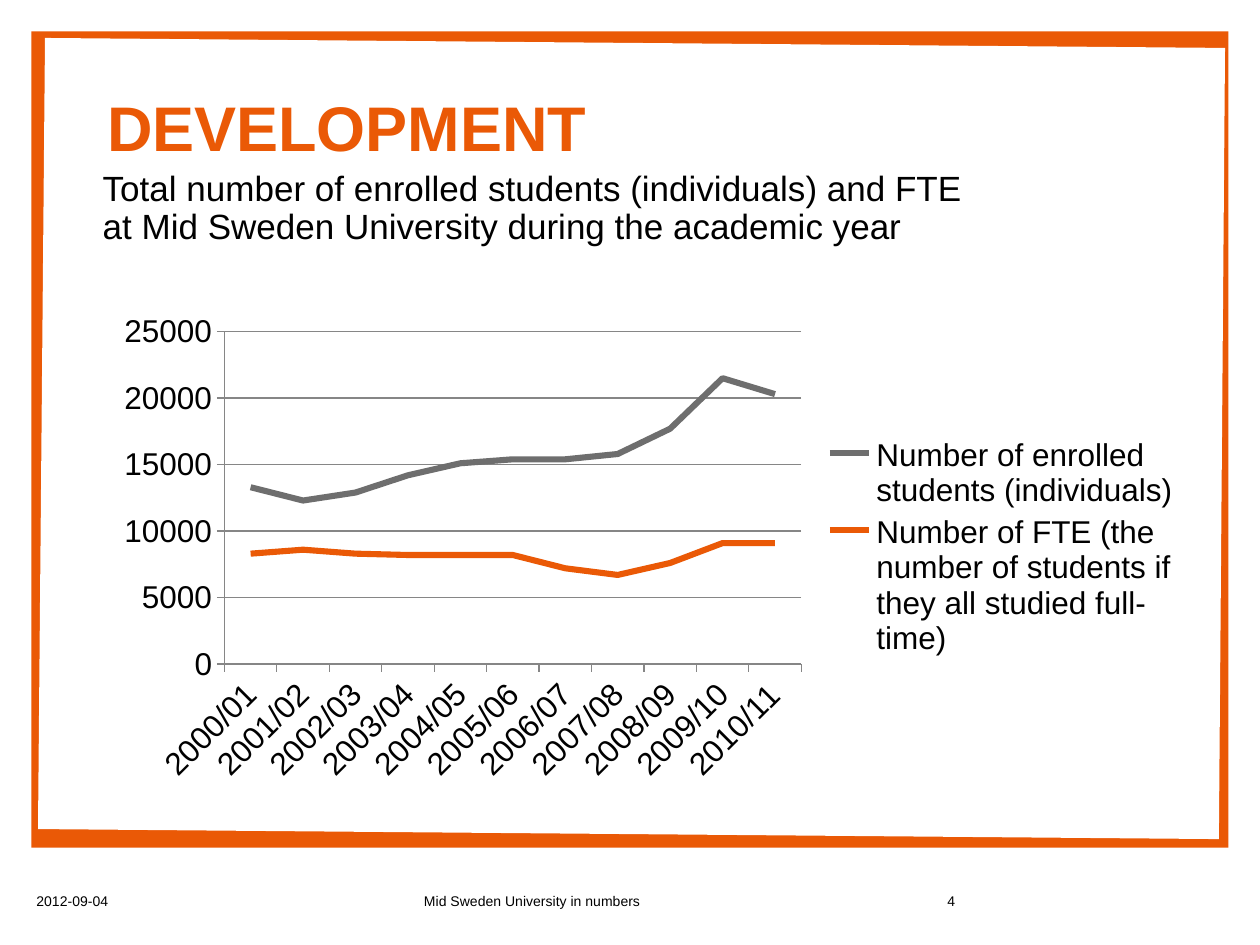
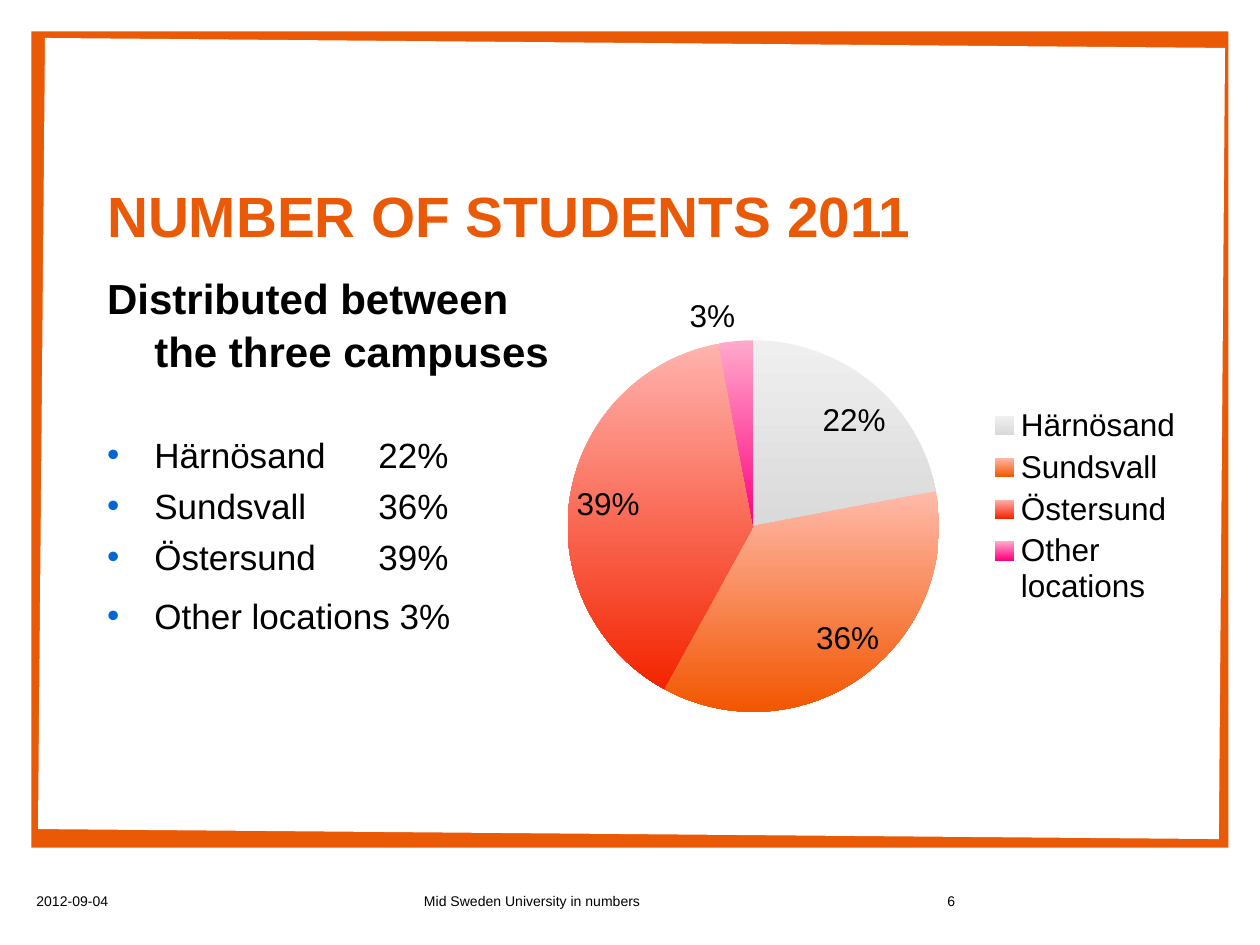
import lxml.etree
import pptx
import pptx.chart.data
import pptx.dml.color
import pptx.enum.chart
import pptx.enum.shapes
import pptx.enum.text
import pptx.oxml.ns
import pptx.util

Pt = pptx.util.Pt
RGBColor = pptx.dml.color.RGBColor
ALIGN = pptx.enum.text.PP_ALIGN
ANCHOR = pptx.enum.text.MSO_ANCHOR
CHART = pptx.enum.chart.XL_CHART_TYPE
qn = pptx.oxml.ns.qn

ORANGE = RGBColor(0xEA, 0x59, 0x06)
WHITE = RGBColor(0xFF, 0xFF, 0xFF)
BLACK = RGBColor(0, 0, 0)
BLUE = RGBColor(0x02, 0x68, 0xCF)
DARK_GRAY = RGBColor(0x6E, 0x6E, 0x6E)
GRID_GRAY = RGBColor(0x86, 0x86, 0x86)
SLICES = [
    (RGBColor(0xEF, 0xEF, 0xEF), RGBColor(0xDA, 0xDA, 0xDA)),
    (RGBColor(0xFF, 0xBA, 0xAA), RGBColor(0xF2, 0x56, 0x00)),
    (RGBColor(0xFF, 0xB3, 0xAE), RGBColor(0xF4, 0x24, 0x00)),
    (RGBColor(0xFF, 0xAA, 0xCC), RGBColor(0xFF, 0x00, 0x80)),
]
FONT = "Arial"
INDENT = 27
TAB = 155
PAPER = [(25.7, 21.7), (700, 27.4), (696.5, 479.5), (21.7, 473.8)]


class Deck:
    """Holds the style of the deck and the slide being built."""

    def __init__(self):
        self.prs = pptx.Presentation()
        self.prs.slide_width, self.prs.slide_height = Pt(720), Pt(540)
        self.slide = None

    def new_slide(self, number):
        self.slide = self.prs.slides.add_slide(self.prs.slide_layouts[1])
        self.frame()
        self.footer("2012-09-04", 13.7, 168, ALIGN.LEFT)
        self.footer("Mid Sweden University in numbers", 229.7, 149, ALIGN.CENTER)
        self.footer(str(number), 422, 131, ALIGN.RIGHT)

    def frame(self):
        shapes = self.slide.shapes
        band = shapes.add_shape(pptx.enum.shapes.MSO_SHAPE.RECTANGLE,
                                Pt(18), Pt(18), Pt(684), Pt(466.4))
        builder = shapes.build_freeform(Pt(PAPER[0][0]), Pt(PAPER[0][1]))
        builder.add_line_segments([(Pt(x), Pt(y)) for x, y in PAPER[1:]], close=True)
        paper = builder.convert_to_shape()
        for i, (sp, color) in enumerate([(band, ORANGE), (paper, WHITE)]):
            sp.shadow.inherit = False
            sp.fill.solid()
            sp.fill.fore_color.rgb = color
            sp.line.fill.background()
            shapes.element.insert(2 + i, sp.element)

    def place(self, sp, left, top, width, height, anchor):
        sp.left, sp.top, sp.width, sp.height = Pt(left), Pt(top), Pt(width), Pt(height)
        tf = sp.text_frame
        tf.word_wrap = True
        tf.auto_size = pptx.enum.text.MSO_AUTO_SIZE.NONE
        tf.vertical_anchor = anchor
        return tf

    def run(self, p, text, size, color=BLACK, bold=False):
        r = p.add_run()
        r.text = text
        r.font.name, r.font.size, r.font.bold = FONT, Pt(size), bold
        r.font.color.rgb = color

    def footer(self, text, left, width, align):
        sp = self.slide.shapes.add_textbox(0, 0, 0, 0)
        p = self.place(sp, left, 500.4, width, 28.8, ANCHOR.MIDDLE).paragraphs[0]
        p.alignment = align
        self.run(p, text, 8)

    def title(self, text, top, width, size):
        tf = self.place(self.slide.shapes.title, 54, top, width, 54, ANCHOR.MIDDLE)
        p = tf.paragraphs[0]
        p.alignment = ALIGN.LEFT
        self.run(p, text, size, ORANGE, True)

    def body(self, left, top, width, height):
        return self.place(self.slide.placeholders[1], left, top, width, height, ANCHOR.TOP)

    def paragraph(self, p, text, size, spacing, before=0, hanging=True, bullet=False, bold=False):
        p.line_spacing, p.space_before = spacing, Pt(before)
        pPr = p._p.get_or_add_pPr()
        pPr.set("marL", str(Pt(INDENT)))
        pPr.set("indent", str(-Pt(INDENT) if hanging else 0))
        if bullet:
            clr = lxml.etree.SubElement(pPr, qn("a:buClr"))
            lxml.etree.SubElement(clr, qn("a:srgbClr"), val=str(BLUE))
            lxml.etree.SubElement(pPr, qn("a:buFont"), typeface=FONT)
            lxml.etree.SubElement(pPr, qn("a:buChar"), char="•")
            tabs = lxml.etree.SubElement(pPr, qn("a:tabLst"))
            lxml.etree.SubElement(tabs, qn("a:tab"), pos=str(Pt(TAB)), algn="l")
        else:
            lxml.etree.SubElement(pPr, qn("a:buNone"))
        self.run(p, text, size, bold=bold)

    def chart(self, kind, cats, series, box, plot):
        data = pptx.chart.data.CategoryChartData()
        data.categories = cats
        for name, values in series:
            data.add_series(name, values)
        chart = self.slide.shapes.add_chart(kind, *map(Pt, box), data).chart
        chart.has_title = False
        chart.font.name, chart.font.size = FONT, Pt(18)
        chart.font.color.rgb = BLACK
        chart.has_legend = True
        chart.legend.position = pptx.enum.chart.XL_LEGEND_POSITION.RIGHT
        chart.legend.include_in_layout = False
        area = chart._chartSpace.chart.plotArea
        for old in area.findall(qn("c:layout")):
            area.remove(old)
        layout = lxml.etree.Element(qn("c:layout"))
        area.insert(0, layout)
        manual = lxml.etree.SubElement(layout, qn("c:manualLayout"))
        settings = [("layoutTarget", "inner"), ("xMode", "edge"), ("yMode", "edge")]
        for tag, val in settings + list(zip("xywh", plot)):
            lxml.etree.SubElement(manual, qn("c:" + tag), val=str(val))
        return chart

    def line_chart(self, cats, series, colors, box, plot):
        chart = self.chart(CHART.LINE, cats, series, box, plot)
        for s, color in zip(chart.plots[0].series, colors):
            s.smooth = False
            s.marker.style = pptx.enum.chart.XL_MARKER_STYLE.NONE
            s.format.line.width = Pt(3.5)
            s.format.line.color.rgb = color
        value, category = chart.value_axis, chart.category_axis
        value.minimum_scale, value.maximum_scale, value.major_unit = 0, 25000, 5000
        value.has_major_gridlines = True
        for line in (value.format.line, value.major_gridlines.format.line, category.format.line):
            line.color.rgb = GRID_GRAY
            line.width = Pt(0.75)
        category.tick_labels.font.size = Pt(18)
        category._element.txPr.bodyPr.set("rot", "-2700000")

    def pie_chart(self, cats, values, colors, box, plot):
        chart = self.chart(CHART.PIE, cats, [("Students", values)], box, plot)
        pie = chart.plots[0]
        pie.vary_by_categories = True
        for i, shades in enumerate(colors):
            fill = pie.series[0].points[i].format.fill
            fill.gradient()
            fill.gradient_angle = 270
            for stop, color in zip(fill.gradient_stops, shades):
                stop.color.rgb = color
        pie.has_data_labels = True
        labels = pie.data_labels
        labels.show_value, labels.show_percentage = False, True
        labels.number_format, labels.number_format_is_linked = "0%", False
        labels.position = pptx.enum.chart.XL_LABEL_POSITION.BEST_FIT


def development(deck):
    deck.new_slide(4)
    deck.title("DEVELOPMENT", 45.4, 459, 36)
    tf = deck.body(24.5, 94.3, 548, 78)
    deck.paragraph(tf.paragraphs[0],
                   "Total number of enrolled students (individuals) and FTE "
                   "at Mid Sweden University during the academic year",
                   20, 0.9, hanging=False)
    years = [f"{y}/{(y + 1) % 100:02d}" for y in range(2000, 2011)]
    series = [
        ("Number of enrolled students (individuals)",
         [13300, 12300, 12900, 14200, 15100, 15400, 15400, 15800, 17700, 21500, 20300]),
        ("Number of FTE (the number of students if they all studied full-time)",
         [8300, 8600, 8300, 8200, 8200, 8200, 7200, 6700, 7600, 9100, 9100]),
    ]
    deck.line_chart(years, series, [DARK_GRAY, ORANGE],
                    (59.8, 172.8, 622, 279.4), (0.11, 0.06, 0.53, 0.68))


def campuses(deck):
    deck.new_slide(6)
    deck.title("NUMBER OF STUDENTS 2011", 95.8, 488, 32.4)
    shares = {"Härnösand": 22, "Sundsvall": 36, "Östersund": 39, "Other locations": 3}
    tf = deck.body(54, 150.5, 282, 275)
    deck.paragraph(tf.paragraphs[0], "Distributed between the three campuses",
                   24, 1.05, bold=True)
    gaps = [32, 4, 4, 8.5]
    for (place, share), gap in zip(shares.items(), gaps):
        sep = " " if place == "Other locations" else "\t"
        deck.paragraph(tf.add_paragraph(), f"{place}{sep}{share}%", 20, 1.05, gap, bullet=True)
    deck.pie_chart(list(shares), list(shares.values()), SLICES,
                   (297.4, 160.6, 386, 257), (0.07, 0.13, 0.55, 0.83))


def main():
    deck = Deck()
    development(deck)
    campuses(deck)
    deck.prs.save("out.pptx")


if __name__ == "__main__":
    main()
